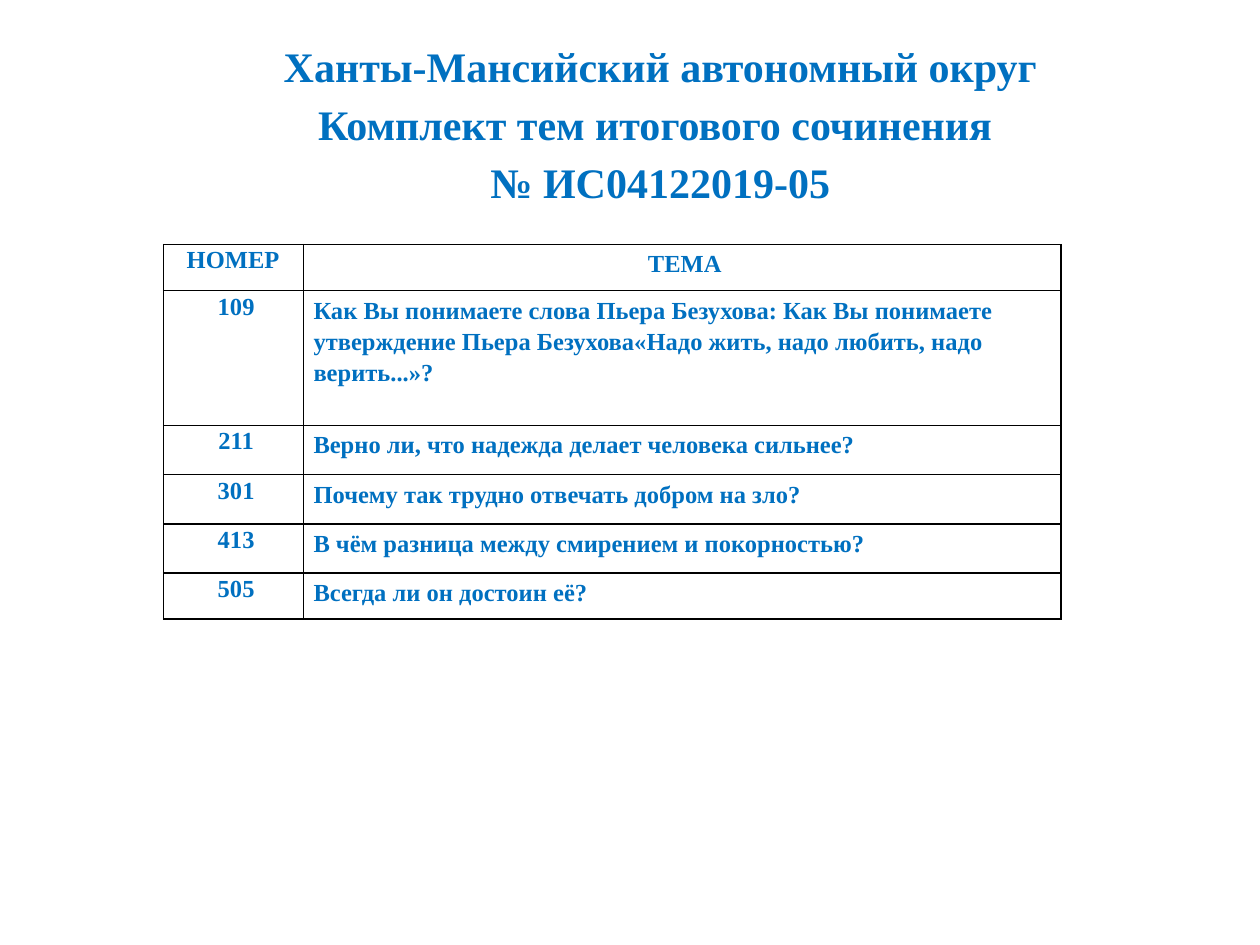
from dataclasses import dataclass

from lxml.etree import SubElement
from pptx import Presentation
from pptx.dml.color import RGBColor
from pptx.enum.text import MSO_ANCHOR, MSO_AUTO_SIZE, PP_ALIGN
from pptx.oxml.ns import qn
from pptx.util import Cm, Pt


@dataclass(frozen=True)
class Theme:
    font: str = "Times New Roman"
    text: RGBColor = RGBColor(0x00, 0x70, 0xC0)
    paper: RGBColor = RGBColor(0xFF, 0xFF, 0xFF)
    border: str = "000000"
    border_width: Pt = Pt(1)
    title_size: Pt = Pt(24)
    table_size: Pt = Pt(14)
    line_spacing: float = 1.15
    topic_gap: Pt = Pt(8)


THEME = Theme()

HEADING = [
    "Ханты-Мансийский автономный округ",
    "Комплект тем итогового сочинения ",
    "№ ИС04122019-05",
]

# Number, topic and row height in centimetres
TOPICS = [
    ("НОМЕР ", "ТЕМА", 0.93),
    ("109", "Как Вы понимаете слова Пьера Безухова: Как Вы понимаете "
            "утверждение Пьера Безухова«Надо жить, надо любить, надо верить...»?", 2.72),
    ("211", "Верно ли, что надежда делает человека сильнее?", 0.99),
    ("301", "Почему так трудно отвечать добром на зло?", 0.99),
    ("413", "В чём разница между смирением и покорностью?", 0.99),
    ("505", "Всегда ли он достоин её?", 0.93),
]


def style_paragraph(paragraph, size, align):
    paragraph.alignment = align
    font = paragraph.font
    font.name, font.size, font.bold = THEME.font, size, True
    font.color.rgb = THEME.text


def add_borders(cell):
    properties = cell._tc.get_or_add_tcPr()
    for position, side in enumerate(("a:lnL", "a:lnR", "a:lnT", "a:lnB")):
        line = properties.makeelement(qn(side), {"w": str(THEME.border_width)})
        fill = SubElement(line, qn("a:solidFill"))
        SubElement(fill, qn("a:srgbClr"), val=THEME.border)
        properties.insert(position, line)


def place_heading(slide, left, top, width, height):
    heading = slide.shapes.title
    heading.left, heading.top, heading.width, heading.height = left, top, width, height
    frame = heading.text_frame
    frame.text = "\n".join(HEADING)
    frame.word_wrap = True
    frame.auto_size = MSO_AUTO_SIZE.NONE
    frame.vertical_anchor = MSO_ANCHOR.TOP
    for paragraph in frame.paragraphs:
        style_paragraph(paragraph, THEME.title_size, PP_ALIGN.CENTER)
        paragraph.line_spacing = THEME.line_spacing


def fill_cell(cell, text, align):
    cell.text = text
    cell.margin_left, cell.margin_right = Cm(0.2), Cm(0.1)
    cell.margin_top = cell.margin_bottom = Cm(0.05)
    cell.fill.solid()
    cell.fill.fore_color.rgb = THEME.paper
    add_borders(cell)
    paragraph = cell.text_frame.paragraphs[0]
    style_paragraph(paragraph, THEME.table_size, align)
    return paragraph


def place_topics(slide, left, top, width, height):
    table = slide.shapes.add_table(len(TOPICS), 2, left, top, width, height).table
    table.first_row = table.horz_banding = False
    number_width = Cm(2.82)
    table.columns[0].width = number_width
    table.columns[1].width = width - number_width
    for index, (number, topic, row_height) in enumerate(TOPICS):
        table.rows[index].height = Cm(row_height)
        fill_cell(table.cell(index, 0), number, PP_ALIGN.CENTER)
        topic_align = PP_ALIGN.LEFT if index else PP_ALIGN.CENTER
        topic_line = fill_cell(table.cell(index, 1), topic, topic_align)
        topic_line.line_spacing = THEME.line_spacing
        topic_line.space_after = THEME.topic_gap


def main():
    presentation = Presentation()
    presentation.slide_width, presentation.slide_height = Cm(25.4), Cm(19.05)
    slide = presentation.slides.add_slide(presentation.slide_layouts[5])
    place_heading(slide, Cm(2.31), Cm(0.53), Cm(22), Cm(3.78))
    place_topics(slide, Cm(3.3), Cm(4.93), Cm(18.09), Cm(7.55))
    presentation.save("out.pptx")


if __name__ == "__main__":
    main()
